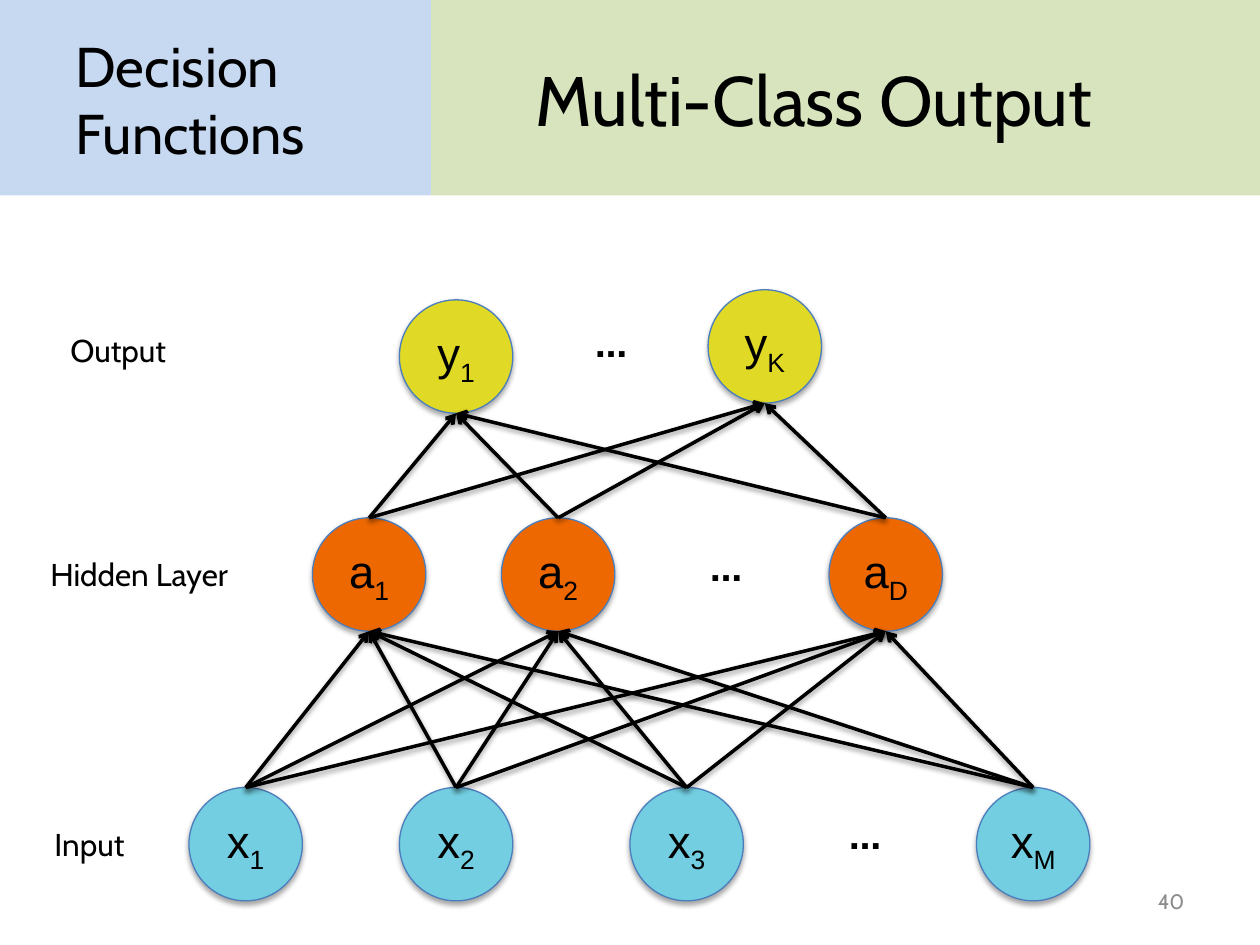
import pptx
import pptx.dml.color
import pptx.enum.shapes
import pptx.enum.text
import pptx.oxml
import pptx.oxml.ns
import pptx.util
from pptx.util import Inches

COLORS = {
    "blue_band": "C6D9F1", "green_band": "D7E4BD", "text": "000000",
    "number": "8C8C8C", "node_line": "4B7EBC",
    "x": "72CEE0", "a": "EE6802", "y": "E0D925",
}
LEFT = pptx.enum.text.PP_ALIGN.LEFT
CENTER = pptx.enum.text.PP_ALIGN.CENTER
RIGHT = pptx.enum.text.PP_ALIGN.RIGHT
TOP = pptx.enum.text.MSO_ANCHOR.TOP
MIDDLE = pptx.enum.text.MSO_ANCHOR.MIDDLE
SHAPES = pptx.enum.shapes.MSO_SHAPE
NODE_SIZE = 0.9


def rgb(name):
    return pptx.dml.color.RGBColor.from_string(COLORS[name])


def parse_xml(tag, attributes="", content=""):
    namespace = pptx.oxml.ns.nsdecls("a")
    return pptx.oxml.parse_xml(f"<a:{tag} {namespace} {attributes}>{content}</a:{tag}>")


class NetworkSlide:
    def __init__(self, slide, font="Cabin"):
        self.slide = slide
        self.font = font

    def format_text(self, shape, text, size, align, anchor, color="text", bold=False):
        frame = shape.text_frame
        frame.text = text
        frame.word_wrap = True
        frame.auto_size = pptx.enum.text.MSO_AUTO_SIZE.NONE
        frame.vertical_anchor = anchor
        paragraph = frame.paragraphs[0]
        paragraph.alignment = align
        paragraph.space_before = pptx.util.Pt(0)
        for run in paragraph.runs:
            self.format_run(run, size, self.font, color, bold)

    def format_run(self, run, size, font, color="text", bold=False):
        run.font.size = pptx.util.Pt(size)
        run.font.name = font
        run.font.bold = bold
        run.font.color.rgb = rgb(color)

    def placeholder(self, shape, text, box, size, align):
        shape.left, shape.top, shape.width, shape.height = map(Inches, box)
        self.format_text(shape, text, size, align, MIDDLE)

    def title(self, text, box):
        self.placeholder(self.slide.shapes.title, text, box, 40, CENTER)

    def body(self, text, box):
        shape = self.slide.placeholders[1]
        self.placeholder(shape, text, box, 32, LEFT)
        properties = shape.text_frame.paragraphs[0]._p.get_or_add_pPr()
        properties.set("marL", "0")
        properties.set("indent", "0")
        properties.append(parse_xml("buNone"))

    def band(self, left, width, color):
        shape = self.slide.shapes.add_shape(
            SHAPES.RECTANGLE, Inches(left), 0, Inches(width), Inches(1.55))
        shape.shadow.inherit = False
        shape.fill.solid()
        shape.fill.fore_color.rgb = rgb(color)
        shape.line.fill.background()
        self.slide.shapes._spTree.insert(2, shape._element)

    def label(self, text, box, size=18, align=CENTER, anchor=TOP, color="text", bold=False):
        shape = self.slide.shapes.add_textbox(*map(Inches, box))
        self.format_text(shape, text, size, align, anchor, color, bold)

    def dots(self, left, top):
        self.label("…", (left, top, 0.58, 0.54), 26, anchor=MIDDLE, bold=True)

    def shadow(self, shape, distance, opacity):
        color = f'<a:srgbClr val="000000"><a:alpha val="{opacity}000"/></a:srgbClr>'
        attributes = (f'blurRad="{pptx.util.Pt(3.1)}" dist="{pptx.util.Pt(distance)}" '
                      'dir="5400000" rotWithShape="0"')
        outer = f"<a:outerShdw {attributes}>{color}</a:outerShdw>"
        shape._element.spPr.append(parse_xml("effectLst", content=outer))

    def node(self, letter, subscript, left, top):
        shape = self.slide.shapes.add_shape(
            SHAPES.FLOWCHART_CONNECTOR, Inches(left), Inches(top),
            Inches(NODE_SIZE), Inches(NODE_SIZE))
        shape.fill.solid()
        shape.fill.fore_color.rgb = rgb(letter)
        shape.line.color.rgb = rgb("node_line")
        shape.line.width = pptx.util.Pt(0.75)
        self.shadow(shape, 1.8, 35)
        frame = shape.text_frame
        frame.word_wrap = False
        frame.vertical_anchor = MIDDLE
        paragraph = frame.paragraphs[0]
        paragraph.text = letter
        paragraph.alignment = CENTER
        paragraph.add_run().text = subscript
        for run in paragraph.runs:
            self.format_run(run, 26, "Arial")
        paragraph.runs[1].font._element.set("baseline", "-25000")
        return shape

    def arrow(self, upper, lower):
        connector = self.slide.shapes.add_connector(
            pptx.enum.shapes.MSO_CONNECTOR.STRAIGHT,
            upper.left + upper.width // 2, upper.top + upper.height,
            lower.left + lower.width // 2, lower.top)
        connector.end_connect(lower, 0)
        connector.line.color.rgb = rgb("text")
        connector.line.width = pptx.util.Pt(2)
        connector.line._get_or_add_ln().append(parse_xml("headEnd", 'type="arrow"'))
        self.shadow(connector, 1.6, 38)


def main():
    presentation = pptx.Presentation()
    presentation.slide_width = Inches(10)
    presentation.slide_height = Inches(7.5)
    network = NetworkSlide(presentation.slides.add_slide(presentation.slide_layouts[1]))

    network.band(0, 3.42, "blue_band")
    network.band(3.42, 6.58, "green_band")
    network.title("Multi-Class Output", (3.42, 0.16, 6.08, 1.25))
    network.body("Decision Functions", (0.5, 0.16, 2.92, 1.25))
    network.label("40", (7.17, 6.95, 2.33, 0.4), 12, RIGHT, MIDDLE, "number")

    layers = [
        ("y", [("1", 3.17, 2.38), ("K", 5.62, 2.3)]),
        ("a", [("1", 2.48, 4.11), ("2", 3.98, 4.11), ("D", 6.58, 4.11)]),
        ("x", [("1", 1.5, 6.25), ("2", 3.17, 6.25), ("3", 5, 6.25), ("M", 7.75, 6.25)]),
    ]
    outputs, hidden, inputs = [
        [network.node(letter, *place) for place in places] for letter, places in layers]
    for uppers, lowers in ((hidden, inputs), (outputs, hidden)):
        for upper in uppers:
            for lower in lowers:
                network.arrow(upper, lower)

    for left, top in ((4.56, 2.42), (5.48, 4.2), (6.58, 6.33)):
        network.dots(left, top)
    network.label("Output", (0.46, 2.58, 1.42, 0.4), align=LEFT)
    network.label("Hidden Layer", (-0.02, 4.36, 2.25, 0.4))
    network.label("Input", (0, 6.5, 1.42, 0.4))

    presentation.save("out.pptx")


if __name__ == "__main__":
    main()
